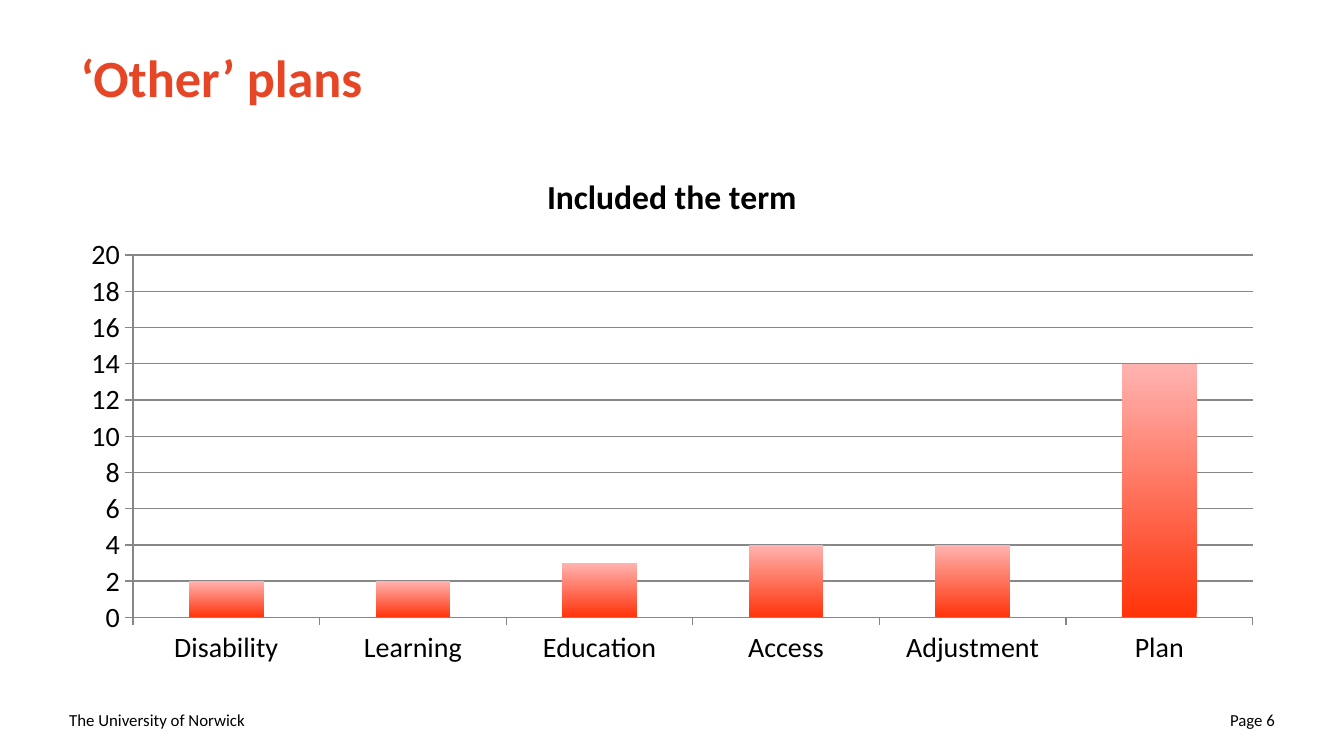
import pptx
import pptx.chart.data
import pptx.dml.color
import pptx.enum.chart
import pptx.enum.text
import pptx.util

Pt = pptx.util.Pt
RGBColor = pptx.dml.color.RGBColor
PP_ALIGN = pptx.enum.text.PP_ALIGN
MIDDLE = pptx.enum.text.MSO_ANCHOR.MIDDLE

FONT = "Calibri"
ORANGE = RGBColor(0xE6, 0x46, 0x26)
BLACK = RGBColor(0, 0, 0)
GREY = RGBColor(0x87, 0x87, 0x87)
BAR_BOTTOM = RGBColor(0xFF, 0x33, 0x0A)
BAR_TOP = RGBColor(0xFF, 0xB3, 0xB0)


def set_font(font, size, color, bold=False):
    font.name = FONT
    font.size = Pt(size)
    font.color.rgb = color
    font.bold = bold


prs = pptx.Presentation()
prs.slide_width, prs.slide_height = Pt(720), Pt(405)
s = prs.slides.add_slide(prs.slide_layouts[5])

# Title
title = s.shapes.title
title.left, title.top, title.width, title.height = Pt(36), Pt(7.2), Pt(648), Pt(67.7)
tf = title.text_frame
tf.text = "‘Other’ plans"
tf.vertical_anchor = MIDDLE
p = tf.paragraphs[0]
p.alignment = PP_ALIGN.LEFT
set_font(p.runs[0].font, 28, ORANGE, bold=True)

# Column chart
data = pptx.chart.data.CategoryChartData()
data.categories = ["Disability", "Learning", "Education", "Access", "Adjustment", "Plan"]
data.add_series("Series 1", (2, 2, 3, 4, 4, 14))
chart = s.shapes.add_chart(
    pptx.enum.chart.XL_CHART_TYPE.COLUMN_CLUSTERED,
    Pt(36), Pt(80), Pt(648), Pt(281.5), data).chart
set_font(chart.font, 15, BLACK)
chart.has_legend = False
chart.has_title = True
tf = chart.chart_title.text_frame
tf.text = "Included the term"
set_font(tf.paragraphs[0].runs[0].font, 18, BLACK, bold=True)
chart.chart_title.include_in_layout = False

plot = chart.plots[0]
plot.gap_width = 150
plot.vary_by_categories = False
fill = plot.series[0].format.fill
fill.gradient()
fill.gradient_angle = 90
for stop, color in zip(fill.gradient_stops, (BAR_BOTTOM, BAR_TOP)):
    stop.color.rgb = color

value_axis = chart.value_axis
value_axis.minimum_scale, value_axis.maximum_scale, value_axis.major_unit = 0, 20, 2
value_axis.has_major_gridlines = True
for part in (value_axis, value_axis.major_gridlines, chart.category_axis):
    part.format.line.color.rgb = GREY
    part.format.line.width = Pt(0.75)
for axis in (value_axis, chart.category_axis):
    axis.major_tick_mark = pptx.enum.chart.XL_TICK_MARK.OUTSIDE

# Footer
for left, text, align in ((30, "The University of Norwick", PP_ALIGN.LEFT),
                          (522, "Page 6", PP_ALIGN.RIGHT)):
    tf = s.shapes.add_textbox(Pt(left), Pt(375), Pt(168), Pt(21.6)).text_frame
    tf.word_wrap = True
    tf.vertical_anchor = MIDDLE
    tf.text = text
    p = tf.paragraphs[0]
    p.alignment = align
    set_font(p.runs[0].font, 9, BLACK)

prs.save("out.pptx")
